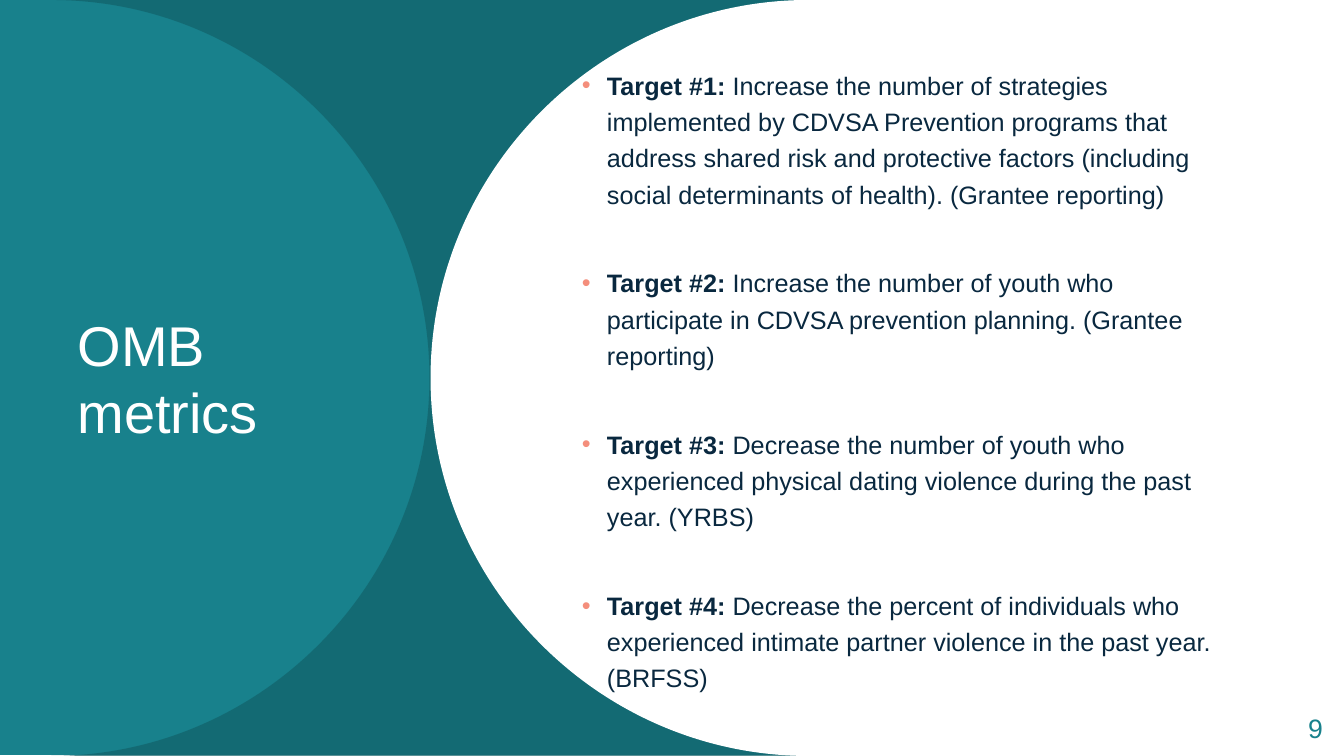
import pptx
import pptx.dml.color
import pptx.enum.shapes
import pptx.enum.text
import pptx.oxml
import pptx.oxml.ns
import pptx.util
from pptx.util import Inches, Pt

COLORS = {"white": "FFFFFF", "teal": "18818C", "deep": "126169",
          "ink": "09283F", "coral": "F48E7C"}
W, H = 13.33, 7.5
RADIUS = H / 2
HANDLE = RADIUS * 0.55  # control point distance for a quarter circle
NS = pptx.oxml.ns.nsdecls("a")
qn = pptx.oxml.ns.qn


def rgb(name):
    return pptx.dml.color.RGBColor.from_string(COLORS[name])


def paint(shape, color):
    """Give a shape a flat fill with no line or shadow."""
    shape.fill.solid()
    shape.fill.fore_color.rgb = rgb(color)
    shape.line.fill.background()
    shape.shadow.inherit = False


deck = pptx.Presentation()
deck.slide_width, deck.slide_height = Inches(W), Inches(H)
slide = deck.slides.add_slide(deck.slide_layouts[1])
shapes = slide.shapes

# White base and teal panel
for left, width, height, color in ((0, W, H, "white"),
                                   (-0.01, 8.61, 7.49, "teal")):
    panel = shapes.add_shape(pptx.enum.shapes.MSO_SHAPE.RECTANGLE, Inches(left),
                             0, Inches(width), Inches(height))
    paint(panel, color)

# Deep band and white panel, each bounded by a half circle
for center, side, edge, color in ((0.51, 1, 8.55, "deep"),
                                  (8.02, -1, 10.79, "white")):
    near, far = center + side * HANDLE, center + side * RADIUS
    points = [(center, 0),
              (near, 0), (far, RADIUS - HANDLE), (far, RADIUS),
              (far, RADIUS + HANDLE), (near, H), (center, H),
              (edge, H)]
    outline = shapes.build_freeform(Inches(edge), 0, scale=1.0)
    outline.add_line_segments([(Inches(x), Inches(y)) for x, y in points])
    curve = outline.convert_to_shape()
    paint(curve, color)
    lines = list(curve._element.iter(qn("a:lnTo")))
    for first in (1, 4):
        bezier = pptx.oxml.parse_xml(f"<a:cubicBezTo {NS}/>")
        lines[first].addprevious(bezier)
        for line in lines[first:first + 3]:
            bezier.append(line[0])
            line.getparent().remove(line)
    if color == "deep":
        tint = curve._element.spPr.find(".//" + qn("a:srgbClr"))
        tint.append(pptx.oxml.parse_xml(f'<a:alpha {NS} val="70000"/>'))

# Text: title, targets and page number
title, targets = shapes.title, slide.placeholders[1]
page = shapes.add_textbox(0, 0, 0, 0)
for holder, box in ((title, (0.67, 0.75, 3.23, 6)),
                    (targets, (5.67, 0.75, 6.67, 6.01)),
                    (page, (12.46, 7.04, 0.76, 0.4))):
    holder.left, holder.top, holder.width, holder.height = map(Inches, box)
    frame = holder.text_frame
    frame.word_wrap = True
    frame.auto_size = pptx.enum.text.MSO_AUTO_SIZE.NONE
    frame.vertical_anchor = pptx.enum.text.MSO_ANCHOR.MIDDLE
    shapes._spTree.append(holder._element)

goals = [
    "Increase the number of strategies implemented by CDVSA Prevention "
    "programs that address shared risk and protective factors (including "
    "social determinants of health). (Grantee reporting)",
    "Increase the number of youth who participate in CDVSA prevention "
    "planning. (Grantee reporting)",
    "Decrease the number of youth who experienced physical dating violence "
    "during the past year. (YRBS)",
    "Decrease the percent of individuals who experienced intimate partner "
    "violence in the past year. (BRFSS)",
]
title.text_frame.text = "OMB metrics"
page.text_frame.text = "9"
heading, number = title.text_frame.paragraphs[0], page.text_frame.paragraphs[0]
heading.alignment = pptx.enum.text.PP_ALIGN.LEFT
number.alignment = pptx.enum.text.PP_ALIGN.RIGHT
number.line_spacing = 0.9
number.space_after = Pt(6)
styled = [(heading, 40, "white"), (number, 19, "teal")]

for index, goal in enumerate(goals, start=1):
    target = (targets.text_frame.paragraphs[0] if index == 1
              else targets.text_frame.add_paragraph())
    label = target.add_run()
    label.text = f"Target #{index}: "
    label.font.bold = True
    target.add_run().text = goal
    target.line_spacing = 1.2
    target.space_before = Pt(0)
    target.space_after = Pt(37.5 if index < len(goals) else 6)
    props = target._p.get_or_add_pPr()
    props.set("marL", str(Inches(0.25)))
    props.set("indent", str(-Inches(0.25)))
    for bullet in (
            f'<a:buClr {NS}><a:srgbClr val="{COLORS["coral"]}"/></a:buClr>',
            f'<a:buFont {NS} typeface="Arial"/>',
            f'<a:buChar {NS} char="•"/>'):
        props.append(pptx.oxml.parse_xml(bullet))
    styled.append((target, 18, "ink"))

for paragraph, size, color in styled:
    paragraph.font.name = "Arial"
    paragraph.font.size = Pt(size)
    paragraph.font.color.rgb = rgb(color)

deck.save("out.pptx")
